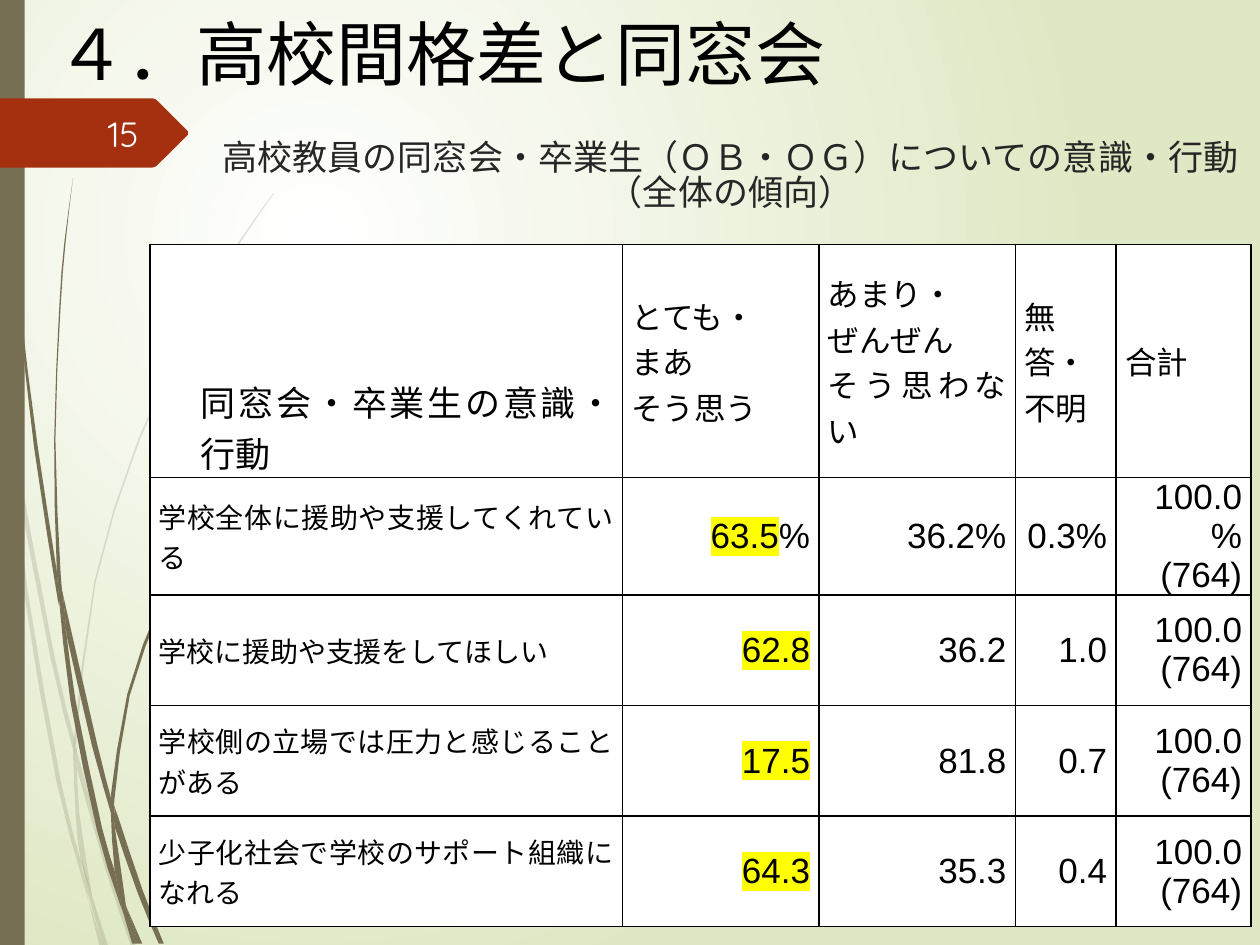
from lxml import etree
from pptx import Presentation
from pptx.dml.color import RGBColor
from pptx.enum import shapes, text
from pptx.oxml.ns import qn
from pptx.util import Cm, Pt

FONT = "Arial"
BLACK, WHITE, OLIVE, RUST = "000000", "FFFFFF", "766F54", "A53010"
ALIGN, ANCHOR = text.PP_ALIGN, text.MSO_ANCHOR
UNITS_PER_INCH = 1000

# Each blade piece is two edges, one up and one down, in hundredths of an inch.
FAINT_BLADES = [
    ([(8, 350), (6, 322), (0, 282)], [(0, 299), (7, 344)]),
    ([(59, 586), (43, 520), (10, 345)], [(12, 376), (40, 522), (59, 599)]),
    ([(108, 751), (88, 692), (64, 607), (61, 596)], [(61, 610), (85, 694), (104, 751)]),
    ([(86, 751), (73, 711)], [(83, 751)]),
    ([(70, 714), (64, 683), (48, 619), (22, 469), (12, 376), (8, 350)],
     [(8, 350), (19, 470), (45, 621), (64, 693), (70, 714)]),
    ([(73, 711), (63, 646), (61, 610), (58, 599)], [(58, 599), (60, 646), (64, 683), (73, 711)]),
    ([(61, 596), (61, 584), (76, 462), (111, 349), (159, 245), (187, 198), (217, 154)],
     [(217, 153), (186, 197), (158, 244), (110, 348), (75, 461), (59, 584), (59, 586)]),
    ([(82, 751), (70, 714)], [(79, 751)]),
    ([(61, 610), (61, 596), (59, 586)], [(58, 599), (61, 608)]),
    ([(83, 751), (73, 711), (65, 683)], [(69, 707), (82, 751)]),
]
SOLID_BLADES = [
    ([(47, 481), (45, 453), (30, 355), (15, 232), (6, 109), (4, 48), (3, 0)],
     [(2, 0), (3, 48), (5, 110), (14, 233), (27, 355), (46, 477)]),
    ([(88, 633), (77, 590), (50, 472)], [(53, 505), (73, 592), (88, 645)]),
    ([(130, 749), (113, 706), (94, 649), (91, 641)], [(91, 656), (109, 708), (126, 749)]),
    ([(97, 722), (91, 691), (81, 657), (60, 556), (53, 505), (47, 477)],
     [(47, 477), (56, 557), (77, 659), (92, 708), (97, 722)]),
    ([(50, 472), (48, 453), (44, 349), (48, 245), (52, 193), (58, 141)],
     [(58, 141), (51, 193), (47, 245), (43, 349), (45, 449), (49, 472)]),
    ([(113, 749), (100, 719)], [(110, 749)]),
    ([(53, 505), (50, 472), (45, 449)], [(45, 453), (47, 477)]),
    ([(91, 641), (91, 633), (103, 552), (131, 476), (169, 406), (191, 374), (216, 344)],
     [(215, 344), (191, 373), (168, 405), (129, 474), (101, 551), (88, 631)]),
    ([(108, 749), (97, 722)], [(105, 749)]),
    ([(100, 719), (91, 656), (88, 645)], [(88, 645), (91, 691), (100, 719)]),
    ([(91, 656), (91, 641), (88, 631)], [(88, 645), (91, 656)]),
    ([(110, 749), (100, 719), (91, 691)], [(97, 722), (108, 749)]),
]
NUMBER_TAG = [(149, 107), (124, 132), (121, 133), (0, 133),
              (0, 78), (121, 78), (124, 79), (149, 104)]

COLUMN_WIDTHS = [9.53, 3.96, 3.96, 2.03, 2.72]
ROW_HEIGHTS = [4.7] + [2.23] * 4
HEADERS = [["同窓会・卒業生の意識・行動"], ["とても・", "まあ", "そう思う"],
           ["あまり・", "ぜんぜん", "そう思わない"], ["無答・", "不明"], ["合計"]]
ANSWERS = [
    ("学校全体に援助や支援してくれている", "63.5", "36.2", "0.3", "%"),
    ("学校に援助や支援をしてほしい", "62.8", "36.2", "1.0", ""),
    ("学校側の立場では圧力と感じることがある", "17.5", "81.8", "0.7", ""),
    ("少子化社会で学校のサポート組織になれる", "64.3", "35.3", "0.4", ""),
]


def rgb(value):
    return RGBColor.from_string(value)


def paint(shape, color):
    shape.fill.solid()
    shape.fill.fore_color.rgb = rgb(color)
    shape.line.fill.background()
    shape.shadow.inherit = False


def add_run(paragraph, words, size, color=BLACK, font=FONT, marked=False):
    run = paragraph.add_run()
    run.text = words
    run.font.size = Pt(size)
    run.font.color.rgb = rgb(color)
    run.font.name = font
    if marked:
        highlight = etree.Element(qn("a:highlight"))
        etree.SubElement(highlight, qn("a:srgbClr"), val="FFFF00")
        run.font._element.find(qn("a:latin")).addprevious(highlight)


def smooth(edge, steps=2):
    """Return points on a Catmull-Rom curve through the edge."""
    padded = [edge[0], *edge, edge[-1]]
    points = [edge[0]]
    for a, b, c, d in zip(padded, padded[1:], padded[2:], padded[3:]):
        for step in range(1, steps + 1):
            t = step / steps
            points.append(tuple(
                q + t * ((r - p) + t * ((2 * p - 5 * q + 4 * r - s) + t * (3 * (q - r) + s - p))) / 2
                for p, q, r, s in zip(a, b, c, d)))
    return points


def add_outline(parent, points, color):
    scaled = [(x * 10, y * 10) for x, y in points]
    builder = parent.build_freeform(*scaled[0], scale=Cm(2.54) / UNITS_PER_INCH)
    builder.add_line_segments(scaled[1:], close=True)
    outline = builder.convert_to_shape()
    paint(outline, color)
    return outline


def add_grass(slide, blades, opacity=None):
    tuft = slide.shapes.add_group_shape()
    for up, down in blades:
        blade = add_outline(tuft.shapes, smooth(up) + smooth(down), OLIVE)
        if opacity:
            tint = blade._element.spPr.find(".//" + qn("a:srgbClr"))
            etree.SubElement(tint, qn("a:alpha"), val=str(opacity * 1000))


def set_glow_background(slide):
    fill = slide.background.fill
    fill.gradient()
    for stop, color, position in zip(fill.gradient_stops, (WHITE, "DFE8C4"), (0, 1)):
        stop.color.rgb = rgb(color)
        stop.position = position
    gradient = slide._element.find(".//" + qn("a:gradFill"))
    gradient.remove(gradient.find(qn("a:lin")))
    circle = etree.SubElement(gradient, qn("a:path"))
    circle.set("path", "circle")
    etree.SubElement(circle, qn("a:fillToRect"), l="50000", t="50000", r="100000", b="100000")


def add_title(slide, lines):
    title = slide.shapes.title
    slide.shapes._spTree.append(title._element)  # in front of the grass
    title.left, title.top, title.width, title.height = Cm(3.3), Cm(2.74), Cm(22.86), Cm(3.18)
    frame = title.text_frame
    frame.auto_size = text.MSO_AUTO_SIZE.NONE
    frame.vertical_anchor = ANCHOR.TOP
    paragraph = frame.paragraphs[0]
    paragraph.alignment = ALIGN.CENTER
    paragraph.line_spacing = 0.84
    for index, line in enumerate(lines):
        if index:
            paragraph.add_line_break()
        add_run(paragraph, line, 20, "262626")


def add_label(slide, box, words, size, align, color=BLACK, font=FONT):
    frame = slide.shapes.add_textbox(*map(Cm, box)).text_frame
    frame.word_wrap = True
    frame.margin_top = frame.margin_bottom = 0
    frame.vertical_anchor = ANCHOR.MIDDLE
    frame.paragraphs[0].alignment = align
    add_run(frame.paragraphs[0], words, size, color, font)


def add_borders(cell):
    properties = cell._tc.get_or_add_tcPr()
    for index, side in enumerate(("a:lnL", "a:lnR", "a:lnT", "a:lnB")):
        border = etree.Element(qn(side), w=str(Pt(1)))
        solid = etree.SubElement(border, qn("a:solidFill"))
        etree.SubElement(solid, qn("a:srgbClr"), val=BLACK)
        properties.insert(index, border)


def fill_cell(cell, paragraphs, size, align, anchor=ANCHOR.MIDDLE, left=0.18):
    """Write paragraphs, each a list of (words, marked) runs."""
    cell.fill.solid()
    cell.fill.fore_color.rgb = rgb(WHITE)
    cell.margin_left, cell.margin_right = Cm(left), Cm(0.18)
    cell.margin_top = cell.margin_bottom = 0
    cell.vertical_anchor = anchor
    add_borders(cell)
    for index, runs in enumerate(paragraphs):
        frame = cell.text_frame
        paragraph = frame.add_paragraph() if index else frame.paragraphs[0]
        paragraph.alignment = align
        for words, marked in runs:
            add_run(paragraph, words, size, marked=marked)


def add_survey_table(slide):
    table = slide.shapes.add_table(
        len(ROW_HEIGHTS), len(COLUMN_WIDTHS), Cm(3.02), Cm(4.93),
        Cm(sum(COLUMN_WIDTHS)), Cm(sum(ROW_HEIGHTS))).table
    table.first_row = table.horz_banding = False
    for column, width in zip(table.columns, COLUMN_WIDTHS):
        column.width = Cm(width)
    for row, height in zip(table.rows, ROW_HEIGHTS):
        row.height = Cm(height)
    for index, lines in enumerate(HEADERS):
        style = (18, ALIGN.JUSTIFY) if index else (20, ALIGN.JUSTIFY, ANCHOR.BOTTOM, 1.03)
        fill_cell(table.cell(0, index), [[(line, False)] for line in lines], *style)
    for row, (question, agree, disagree, blank, unit) in enumerate(ANSWERS, 1):
        fill_cell(table.cell(row, 0), [[(question, False)]], 16, ALIGN.JUSTIFY)
        agree_runs = [(agree, True)] + ([(unit, False)] if unit else [])
        others = [disagree + unit, blank + unit, f"100.0{unit} (764)"]
        for column, runs in enumerate([agree_runs] + [[(other, False)] for other in others], 1):
            fill_cell(table.cell(row, column), [runs], 20, ALIGN.RIGHT)


def main():
    deck = Presentation()
    deck.slide_width, deck.slide_height = Cm(25.4), Cm(19.05)
    slide = deck.slides.add_slide(deck.slide_layouts[5])
    set_glow_background(slide)
    add_grass(slide, FAINT_BLADES, opacity=20)
    add_grass(slide, SOLID_BLADES)
    sidebar = slide.shapes.add_shape(shapes.MSO_SHAPE.RECTANGLE, 0, 0, Cm(0.5), Cm(19.05))
    paint(sidebar, OLIVE)
    add_outline(slide.shapes, NUMBER_TAG, RUST)
    add_title(slide, ["高校教員の同窓会・卒業生（ＯＢ・ＯＧ）についての意識・行動", "（全体の傾向）"])
    add_survey_table(slide)
    add_label(slide, (1.42, 2.18, 1.63, 1.02), "15", 20, ALIGN.RIGHT, "FEFFFF", "Quicksand")
    add_label(slide, (0.89, 0.08, 16.61, 1.96), "４．高校間格差と同窓会", 40, ALIGN.LEFT)
    deck.save("out.pptx")


if __name__ == "__main__":
    main()
